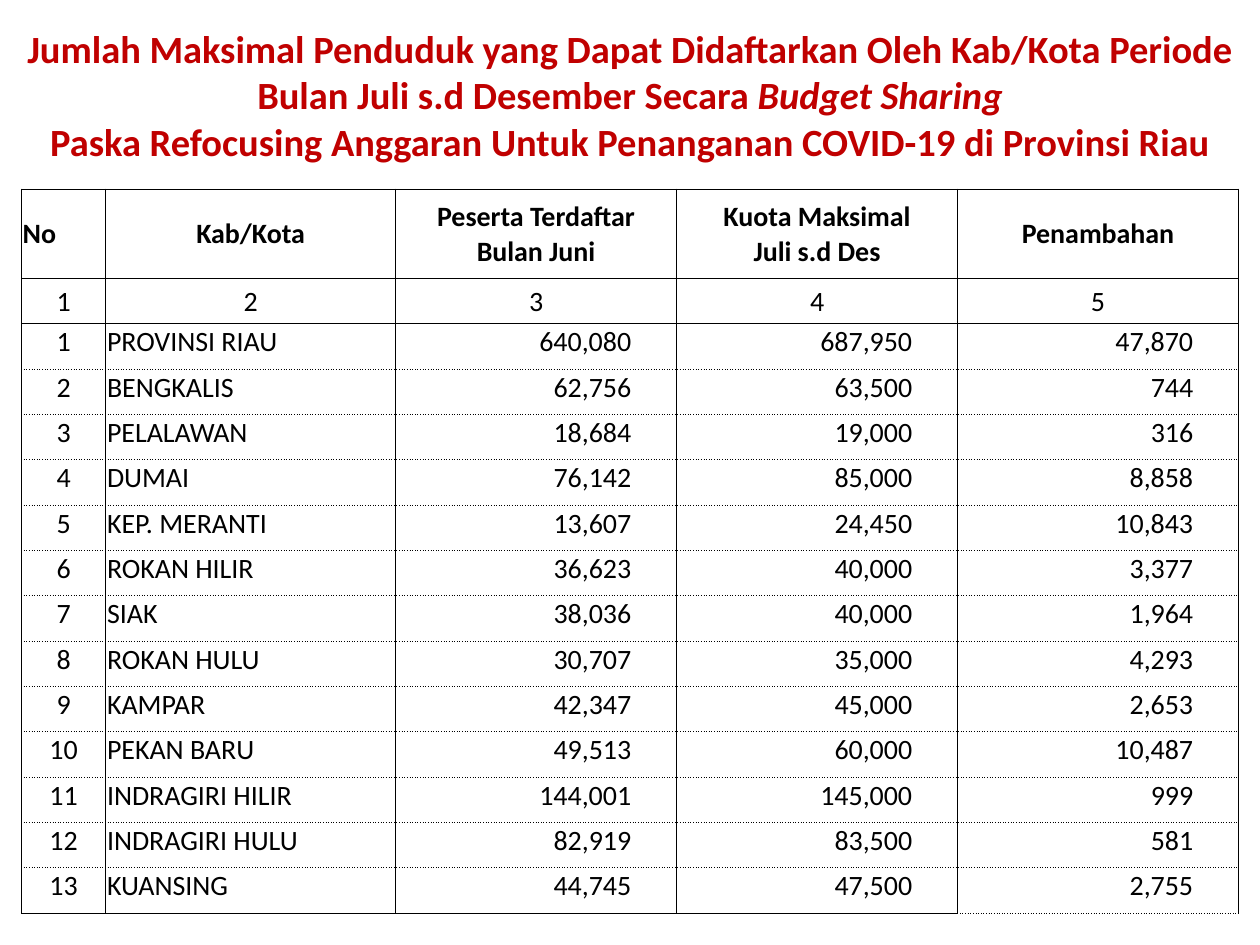
"""Build the slide on the maximum number of residents each Riau regency can register."""
import dataclasses

import lxml.etree
import pptx
import pptx.dml.color
import pptx.enum.text
import pptx.oxml.ns
import pptx.util

Inches = pptx.util.Inches
Align = pptx.enum.text.PP_ALIGN
Anchor = pptx.enum.text.MSO_ANCHOR

TITLE = [
    [("Jumlah Maksimal Penduduk yang Dapat Didaftarkan Oleh Kab/Kota "
      "Periode Bulan Juli s.d Desember Secara ", False), ("Budget Sharing", True)],
    [("Paska Refocusing Anggaran Untuk Penanganan COVID-19 di Provinsi Riau", False)],
]
HEADER = ["No", "Kab/Kota", "Peserta Terdaftar\nBulan Juni",
          "Kuota Maksimal\nJuli s.d Des", "Penambahan"]
REGIONS = [
    ("PROVINSI RIAU", 640080, 687950),
    ("BENGKALIS", 62756, 63500),
    ("PELALAWAN", 18684, 19000),
    ("DUMAI", 76142, 85000),
    ("KEP. MERANTI", 13607, 24450),
    ("ROKAN HILIR", 36623, 40000),
    ("SIAK", 38036, 40000),
    ("ROKAN HULU", 30707, 35000),
    ("KAMPAR", 42347, 45000),
    ("PEKAN BARU", 49513, 60000),
    ("INDRAGIRI HILIR", 144001, 145000),
    ("INDRAGIRI HULU", 82919, 83500),
    ("KUANSING", 44745, 47500),
]
COLUMN_WIDTHS = [0.67, 2.3, 2.23, 2.23, 2.23]
HEADER_HEIGHT, ROW_HEIGHT = 0.71, 0.36
HEADER_ROWS = 2
NUMBER_INDENT = 0.36


@dataclasses.dataclass
class Theme:
    """Colours, typeface and sizes."""
    font: str = "Calibri"
    title_color: str = "C00000"
    text_color: str = "000000"
    border_color: str = "000000"
    title_size: int = 22
    table_size: int = 16
    border_width: float = 0.5


class SlideBuilder:
    """Draw styled elements on one slide."""

    def __init__(self, slide, theme):
        self.slide = slide
        self.theme = theme

    def style(self, r, size, color, bold=False, italic=False):
        """Format one run."""
        r.font.name = self.theme.font
        r.font.size = pptx.util.Pt(size)
        r.font.color.rgb = pptx.dml.color.RGBColor.from_string(color)
        r.font.bold = bold
        r.font.italic = italic

    def title(self, left, top, width, height, paragraphs):
        """Add the centred heading from paragraphs of (text, italic) runs."""
        sp = self.slide.shapes.add_textbox(
            Inches(left), Inches(top), Inches(width), Inches(height))
        tf = sp.text_frame
        tf.word_wrap = True
        tf.margin_left = tf.margin_right = Inches(0.05)
        tf.margin_top = Inches(0.07)
        for i, runs in enumerate(paragraphs):
            p = tf.add_paragraph() if i else tf.paragraphs[0]
            p.alignment = Align.CENTER
            for text, italic in runs:
                r = p.add_run()
                r.text = text
                self.style(r, self.theme.title_size, self.theme.title_color, True, italic)

    def border(self, cell, side, dash):
        """Append one border line to a cell."""
        tag = pptx.oxml.ns.qn
        ln = lxml.etree.SubElement(
            cell._tc.get_or_add_tcPr(), tag(f"a:ln{side}"),
            w=str(pptx.util.Pt(self.theme.border_width)))
        fill = lxml.etree.SubElement(ln, tag("a:solidFill"))
        lxml.etree.SubElement(fill, tag("a:srgbClr"), val=self.theme.border_color)
        lxml.etree.SubElement(ln, tag("a:prstDash"), val=dash)

    def cell(self, cell, text, align, anchor, bold, indent, dashes):
        """Fill and format one table cell."""
        cell.margin_left = cell.margin_top = Inches(0.01)
        cell.margin_right = Inches(indent)
        cell.margin_bottom = 0
        cell.vertical_anchor = anchor
        cell.text_frame.text = text
        for p in cell.text_frame.paragraphs:
            p.alignment = align
            for r in p.runs:
                self.style(r, self.theme.table_size, self.theme.text_color, bold)
        for side, dash in dashes.items():
            self.border(cell, side, dash)
        cell.fill.background()

    def table(self, left, top, widths, heights, rows):
        """Add the ruled table with dotted lines between the body rows."""
        table = self.slide.shapes.add_table(
            len(rows), len(widths), Inches(left), Inches(top),
            Inches(sum(widths)), Inches(sum(heights))).table
        table.first_row = table.horz_banding = False
        for column, width in zip(table.columns, widths):
            column.width = Inches(width)
        last_row, last_col = len(rows) - 1, len(widths) - 1
        for i, values in enumerate(rows):
            table.rows[i].height = Inches(heights[i])
            heading = i < HEADER_ROWS
            for j, text in enumerate(values):
                number = not heading and j > 1
                plain = (i, j) == (0, 0) or (not heading and j == 1)
                align = Align.RIGHT if number else Align.LEFT if plain else Align.CENTER
                solid_bottom = heading or (i == last_row and j < last_col)
                dashes = {"L": "solid", "R": "solid",
                          "T": "solid" if i <= HEADER_ROWS else "dot",
                          "B": "solid" if solid_bottom else "dot"}
                self.cell(table.cell(i, j), text, align,
                          Anchor.MIDDLE if heading else Anchor.TOP, i == 0,
                          NUMBER_INDENT if number else 0.01, dashes)


def main():
    """Build and save the presentation."""
    prs = pptx.Presentation()
    prs.slide_width, prs.slide_height = Inches(10), Inches(7.5)
    s = SlideBuilder(prs.slides.add_slide(prs.slide_layouts[6]), Theme())
    rows = [HEADER, [str(n) for n in range(1, len(HEADER) + 1)]]
    for n, (region, registered, quota) in enumerate(REGIONS, 1):
        figures = (registered, quota, quota - registered)
        rows.append([str(n), region, *(f"{value:,}" for value in figures)])
    heights = [HEADER_HEIGHT] + [ROW_HEIGHT] * (len(rows) - 1)
    s.table(0.17, 1.5, COLUMN_WIDTHS, heights, rows)
    s.title(0.12, 0.13, 9.76, 1.29, TITLE)
    prs.save("out.pptx")


if __name__ == "__main__":
    main()
